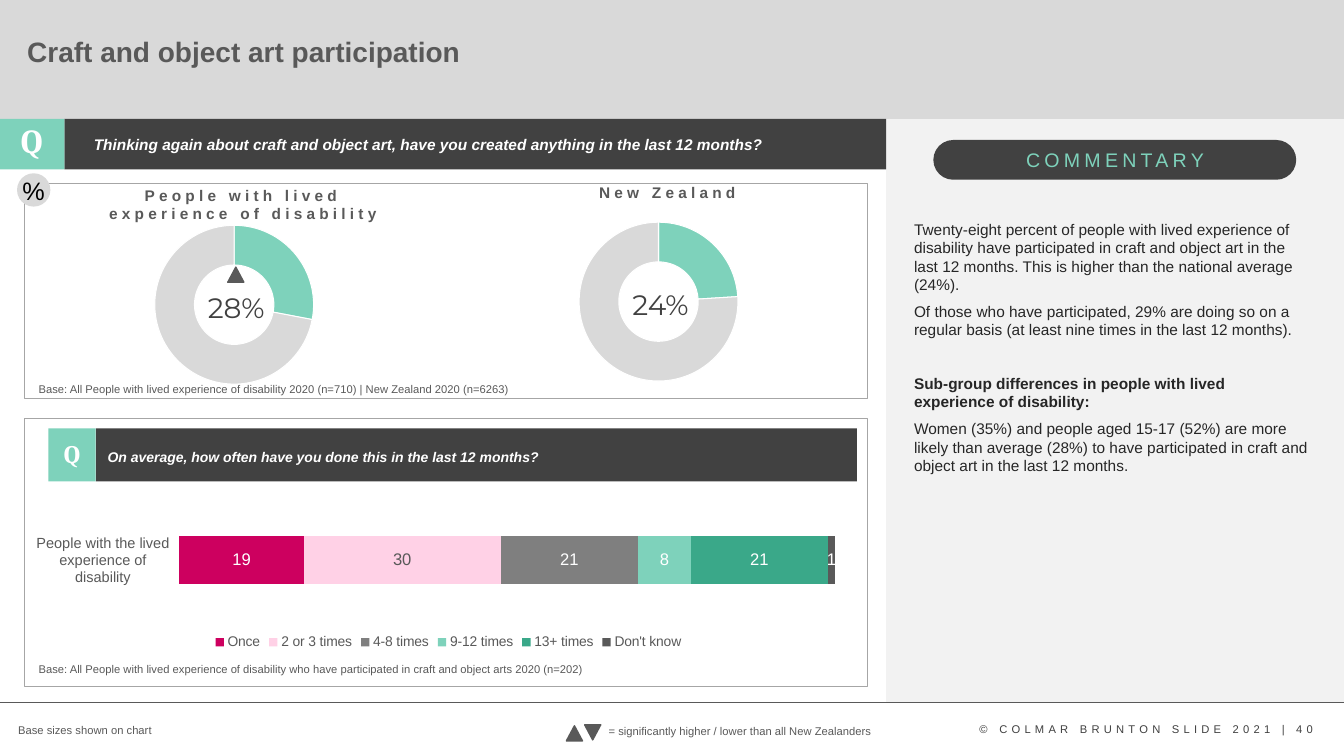
import pptx
import pptx.chart.data
import pptx.dml.color
import pptx.enum.chart
import pptx.enum.shapes
import pptx.enum.text
import pptx.oxml
import pptx.oxml.ns
import pptx.util

Pt = pptx.util.Pt
qn = pptx.oxml.ns.qn
SHAPE = pptx.enum.shapes.MSO_SHAPE
ALIGN = pptx.enum.text.PP_ALIGN
ANCHOR = pptx.enum.text.MSO_ANCHOR
AUTO_SIZE = pptx.enum.text.MSO_AUTO_SIZE
CHART = pptx.enum.chart.XL_CHART_TYPE

COLORS = {
    "white": "FFFFFF", "black": "000000", "ink": "262626", "dark": "414141",
    "credit": "404040", "text": "595959", "gray": "7F7F7F", "border": "A6A6A6",
    "light": "D9D9D9", "panel": "F2F2F2", "mint": "7ED2BB", "green": "3AA889",
    "magenta": "CD005F", "pink": "FFD1E6",
}


def rgb(name):
    return pptx.dml.color.RGBColor.from_string(COLORS[name])


def write(frame, text, size=8, color="text", font="Arial", bold=False, italic=False,
          align=ALIGN.LEFT, spacing=0, before=0, line_spacing=None, bullet_off=False):
    first = frame.paragraphs[0]
    paragraph = frame.add_paragraph() if first.runs else first
    paragraph.alignment = align
    paragraph.space_before = Pt(before)
    if line_spacing:
        paragraph.line_spacing = line_spacing
    if bullet_off:
        properties = paragraph._p.get_or_add_pPr()
        properties.set("marL", "0")
        properties.set("indent", "0")
        properties.append(pptx.oxml.parse_xml(
            f'<a:buNone {pptx.oxml.ns.nsdecls("a")}/>'))
    run = paragraph.add_run()
    run.text = text
    run.font.name, run.font.size = font, Pt(size)
    run.font.bold, run.font.italic = bold, italic
    run.font.color.rgb = rgb(color)
    if spacing:
        run.font._element.set("spc", str(spacing * 100))


class SlideBuilder:
    def __init__(self, presentation):
        self.slide = presentation.slides.add_slide(presentation.slide_layouts[1])
        self.shapes = self.slide.shapes

    def shape(self, kind, box, fill=None, line=None, width=0.5):
        shape = self.shapes.add_shape(kind, *map(Pt, box))
        shape.shadow.inherit = False
        if fill:
            shape.fill.solid()
            shape.fill.fore_color.rgb = rgb(fill)
        else:
            shape.fill.background()
        if line:
            shape.line.color.rgb = rgb(line)
            shape.line.width = Pt(width)
        else:
            shape.line.fill.background()
        return shape

    def triangle(self, left, top, rotation=0):
        shape = self.shape(SHAPE.ISOSCELES_TRIANGLE, (left, top, 11.5, 10.8), "text", "text", 1)
        shape.rotation = rotation

    def text(self, box, text, wrap=True, **style):
        frame = self.shapes.add_textbox(*map(Pt, box)).text_frame
        frame.word_wrap = wrap
        if not wrap:
            frame.auto_size = AUTO_SIZE.SHAPE_TO_FIT_TEXT
        write(frame, text, **style)
        return frame

    def placeholder(self, index, box, text, anchor, **style):
        shape = self.slide.placeholders[index]
        shape.left, shape.top, shape.width, shape.height = map(Pt, box)
        shape.element.getparent().append(shape.element)
        frame = shape.text_frame
        frame.auto_size = AUTO_SIZE.NONE
        frame.vertical_anchor = anchor
        write(frame, text, line_spacing=0.9, **style)

    def line(self, start, end):
        connector = self.shapes.add_connector(
            pptx.enum.shapes.MSO_CONNECTOR.STRAIGHT, *map(Pt, start + end))
        connector.line.color.rgb = rgb("text")
        connector.line.width = Pt(0.5)
        connector.element.spPr.append(pptx.oxml.parse_xml(
            f'<a:effectLst {pptx.oxml.ns.nsdecls("a")}/>'))

    def chart(self, kind, box, categories, series, plot_box, size, color):
        data = pptx.chart.data.CategoryChartData()
        data.categories = categories
        for name, values in series:
            data.add_series(name, values)
        chart = self.shapes.add_chart(kind, *map(Pt, box), data).chart
        chart.has_title = False
        chart.has_legend = False
        chart.font.name, chart.font.size = "Arial", Pt(size)
        chart.font.color.rgb = rgb(color)
        area = chart.element.find(".//" + qn("c:plotArea"))
        for layout in area.findall(qn("c:layout")):
            area.remove(layout)
        places = "".join(f'<c:{key} val="{value}"/>' for key, value in zip("xywh", plot_box))
        area.insert(0, pptx.oxml.parse_xml(
            f'<c:layout {pptx.oxml.ns.nsdecls("c")}><c:manualLayout>'
            '<c:layoutTarget val="inner"/><c:xMode val="edge"/><c:yMode val="edge"/>'
            f'{places}</c:manualLayout></c:layout>'))
        return chart

    def doughnut(self, left, top, heading, share):
        chart = self.chart(CHART.DOUGHNUT, (left, top, 187.9, 143.3), ["1", "2"],
                           [("Series 1", [share, 100 - share])],
                           (0.209, 0.118, 0.604, 0.793), 12, "white")
        plot = chart.plots[0]
        plot.has_data_labels = False
        plot._element.find(qn("c:holeSize")).set("val", "74")
        for index, color in enumerate(("mint", "light")):
            point = plot.series[0].points[index].format
            point.fill.solid()
            point.fill.fore_color.rgb = rgb(color)
            point.line.color.rgb = rgb("white")
            point.line.width = Pt(0.75)
        self.text((left + 66.5, top + 59.8, 61.9, 31.7), f"{share}%", wrap=False,
                  size=20, color="dark", font="Montserrat", align=ALIGN.CENTER)
        self.text((left - 14, top - 14.7, 232.6, 33), heading, size=11, bold=True,
                  spacing=3, align=ALIGN.CENTER)

    def frequency_bar(self, box, category, answers):
        chart = self.chart(CHART.BAR_STACKED_100, box, [category],
                           [(name, [value]) for name, value, *_ in answers],
                           (0.166, 0.114, 0.814, 0.73), 10, "black")
        plot = chart.plots[0]
        plot.gap_width, plot.overlap, plot.vary_by_categories = 177, 100, False
        for series, (_, _, fill, label_color) in zip(plot.series, answers):
            series.format.fill.solid()
            series.format.fill.fore_color.rgb = rgb(fill)
            labels = series.data_labels
            labels.show_value = True
            labels.position = pptx.enum.chart.XL_LABEL_POSITION.CENTER
            labels.font.name, labels.font.size = "Arial", Pt(12)
            labels.font.color.rgb = rgb(label_color)
        chart.value_axis.has_major_gridlines = False
        chart.value_axis.visible = False
        axis = chart.category_axis
        axis.format.line.fill.background()
        chart.has_legend = True
        chart.legend.position = pptx.enum.chart.XL_LEGEND_POSITION.BOTTOM
        chart.legend.include_in_layout = False
        for font, size in ((axis.tick_labels.font, 10.5), (chart.legend.font, 10)):
            font.name, font.size = "Arial", Pt(size)
            font.color.rgb = rgb("text")


def main():
    presentation = pptx.Presentation()
    presentation.slide_width, presentation.slide_height = Pt(960), Pt(540)
    page = SlideBuilder(presentation)
    question = dict(color="white", bold=True, italic=True)
    letter = dict(color="white", font="Cambria", bold=True, align=ALIGN.CENTER)

    page.shape(SHAPE.RECTANGLE, (0, 0, 960, 85), "light")
    page.text((692.6, 512.6, 260, 17.3), "© COLMAR BRUNTON SLIDE 2021 | 40",
              color="credit", spacing=3)
    page.shape(SHAPE.RECTANGLE, (633, 85, 327, 417), "panel")
    page.line((0, 502), (960, 502))
    page.shape(SHAPE.RECTANGLE, (46, 85, 587, 36), "dark")
    page.shape(SHAPE.RECTANGLE, (0, 85, 46, 36), "mint")
    page.text((5.8, 82, 33.8, 36), "Q", size=24, **letter)
    pill = page.shape(SHAPE.ROUNDED_RECTANGLE, (666.7, 100, 259.2, 28.4), "dark")
    pill.adjustments[0] = 0.5
    page.text((725.8, 102.2, 145.4, 24.5), "COMMENTARY", wrap=False, size=14,
              color="mint", spacing=3)
    page.placeholder(0, (12.2, 10, 805.7, 56.2), "Craft and object art participation",
                     ANCHOR.MIDDLE, size=20, bold=True)
    page.placeholder(
        1, (59.8, 94.3, 547, 33),
        "Thinking again about craft and object art, have you created anything in the last 12 months?",
        ANCHOR.TOP, size=11, bullet_off=True, **question)

    page.frequency_bar((26, 338.4, 581.8, 128.9), "People with the lived experience of disability", [
        ("Once", 19, "magenta", "white"), ("2 or 3 times", 30, "pink", "text"),
        ("4-8 times", 21, "gray", "white"), ("9-12 times", 8, "mint", "white"),
        ("13+ times", 21, "green", "white"), ("Don't know", 1, "text", "white")])
    page.text((20.5, 469.4, 520.6, 17.3),
              "Base: All People with lived experience of disability who have participated "
              "in craft and object arts 2020 (n=202)")
    page.shape(SHAPE.RECTANGLE, (17.3, 298.8, 602.6, 191.5), line="border")
    page.shape(SHAPE.RECTANGLE, (68.4, 306, 543.6, 37.8), "dark")
    page.shape(SHAPE.RECTANGLE, (34.6, 306, 33.8, 37.8), "mint")
    page.text((34.6, 309.6, 33.8, 28.8), "Q", size=18, **letter)
    page.text((69.8, 318.2, 530.6, 18.7),
              "On average, how often have you done this in the last 12 months?",
              size=10, line_spacing=0.9, **question)

    page.shape(SHAPE.RECTANGLE, (17.3, 131, 602.6, 153.4), line="border")
    page.doughnut(71.3, 144, "People with lived experience of disability", 28)
    page.doughnut(374.4, 141.8, "New Zealand", 24)
    page.text((20.5, 269.3, 459.4, 17.3),
              "Base: All People with lived experience of disability 2020 (n=710) | New Zealand 2020 (n=6263)")
    percent = page.shape(SHAPE.OVAL, (12.2, 123.8, 23.8, 23.8), "light").text_frame
    percent.margin_left = percent.margin_right = percent.margin_top = percent.margin_bottom = 0
    percent.vertical_anchor = ANCHOR.MIDDLE
    percent.word_wrap = False
    write(percent, "%", size=18, color="black", align=ALIGN.CENTER)

    body = dict(size=11, color="ink")
    commentary = page.text(
        (645.8, 153.4, 296.6, 191.5),
        "Twenty-eight percent of people with lived experience of disability have participated in craft "
        "and object art in the last 12 months. This is higher than the national average (24%).", **body)
    write(commentary, "Of those who have participated, 29% are doing so on a regular basis "
          "(at least nine times in the last 12 months).", before=6, **body)
    write(commentary, "Sub-group differences in people with lived experience of disability:",
          bold=True, before=25, **body)
    write(commentary, "Women (35%) and people aged 15-17 (52%) are more likely than average (28%) "
          "to have participated in craft and object art in the last 12 months.", before=6, **body)

    page.text((5.8, 513.4, 251.3, 17.3), "Base sizes shown on chart")
    page.text((427.7, 514.1, 204.5, 17.3), "= significantly higher / lower than all New Zealanders",
              wrap=False)
    page.triangle(404.6, 518.4)
    page.triangle(417.6, 517.7, rotation=180)
    page.triangle(162.7, 190.8)
    presentation.save("out.pptx")


if __name__ == "__main__":
    main()
